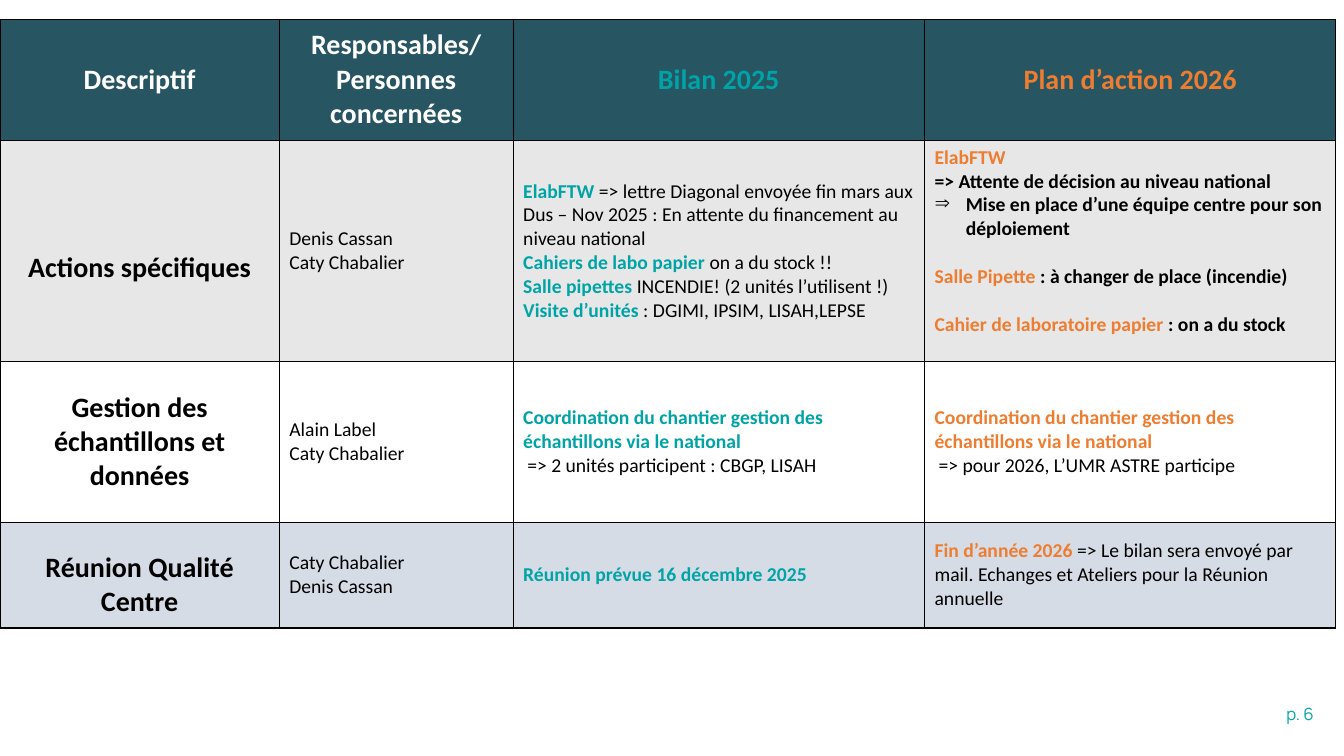
from dataclasses import dataclass

from lxml import etree
from pptx import Presentation
from pptx.dml.color import RGBColor
from pptx.enum.text import MSO_ANCHOR, PP_ALIGN
from pptx.oxml.ns import qn
from pptx.util import Inches, Pt

CENTER, LEFT, RIGHT = PP_ALIGN.CENTER, PP_ALIGN.LEFT, PP_ALIGN.RIGHT
MIDDLE = MSO_ANCHOR.MIDDLE


@dataclass(frozen=True)
class Theme:
    font: str = "Calibri"
    page_font: str = "Manrope"
    heading_size: int = 20
    body_size: int = 14
    page_size: int = 12
    blank_line: int = 17
    border_width: int = 1
    black: str = "000000"
    white: str = "FFFFFF"
    teal: str = "00A3A6"
    orange: str = "ED7D31"
    header_fill: str = "275662"
    grey_fill: str = "E7E7E7"
    blue_fill: str = "D6DCE5"


THEME = Theme()


def line(*spans, **layout):
    return spans, layout


def text(content, color=THEME.black, bold=False, size=THEME.body_size, font=THEME.font):
    return content, color, bold, size, font


def teal(content):
    return text(content, THEME.teal, bold=True)


def orange(content):
    return text(content, THEME.orange, bold=True)


def strong(content):
    return text(content, bold=True)


def heading(content, color=THEME.black):
    return line(text(content, color, bold=True, size=THEME.heading_size), align=CENTER)


def people(*names):
    return [line(text(name)) for name in names]


class SlideBuilder:
    def __init__(self, deck, theme):
        self.theme = theme
        self.page = deck.slides.add_slide(deck.slide_layouts[6])

    def fill_text(self, frame, lines):
        for index, (spans, layout) in enumerate(lines):
            para = frame.paragraphs[0] if index == 0 else frame.add_paragraph()
            self.format_paragraph(para, **layout)
            for content, color, bold, size, font in spans:
                span = para.add_run()
                span.text = content
                span.font.name = font
                span.font.size = Pt(size)
                span.font.bold = bold
                span.font.color.rgb = RGBColor.from_string(color)

    def format_paragraph(self, para, align=LEFT, before=0, indent=0, bullet=None):
        para.alignment = align
        para.space_before = Pt(before)
        properties = para._p.get_or_add_pPr()
        if indent:
            properties.set("marL", str(Inches(indent)))
        if bullet:
            properties.set("indent", str(-Inches(indent)))
            etree.SubElement(properties, qn("a:buChar"), char=bullet)

    def add_label(self, left, top, width, height, lines):
        box = self.page.shapes.add_textbox(
            Inches(left), Inches(top), Inches(width), Inches(height))
        box.text_frame.word_wrap = True
        self.fill_text(box.text_frame, lines)

    def add_border(self, cell):
        properties = cell._tc.get_or_add_tcPr()
        for position, side in enumerate(("a:lnL", "a:lnR", "a:lnT", "a:lnB")):
            edge = etree.Element(qn(side), w=str(Pt(self.theme.border_width)))
            fill = etree.SubElement(edge, qn("a:solidFill"))
            etree.SubElement(fill, qn("a:srgbClr"), val=self.theme.black)
            properties.insert(position, edge)

    def add_table(self, left, top, widths, heights, fills, rows, padding):
        table = self.page.shapes.add_table(
            len(heights), len(widths), Inches(left), Inches(top),
            Inches(sum(widths)), Inches(sum(heights))).table
        table.first_row = table.horz_banding = False
        for column, width in zip(table.columns, widths):
            column.width = Inches(width)
        for row, height in zip(table.rows, heights):
            row.height = Inches(height)
        for row_index, (fill, contents) in enumerate(zip(fills, rows)):
            for column_index, lines in enumerate(contents):
                cell = table.cell(row_index, column_index)
                extra_top, extra_bottom = padding.get((row_index, column_index), (0, 0))
                cell.margin_left = cell.margin_right = Inches(0.1)
                cell.margin_top = Inches(0.05 + extra_top)
                cell.margin_bottom = Inches(0.05 + extra_bottom)
                cell.vertical_anchor = MIDDLE
                cell.fill.solid()
                cell.fill.fore_color.rgb = RGBColor.from_string(fill)
                self.add_border(cell)
                self.fill_text(cell.text_frame, lines)


ROWS = [
    [
        [heading("Descriptif", THEME.white)],
        [heading("Responsables/", THEME.white),
         heading("Personnes concernées", THEME.white)],
        [heading("Bilan 2025", THEME.teal)],
        [heading("Plan d’action 2026", THEME.orange)],
    ],
    [
        [heading("Actions spécifiques")],
        people("Denis Cassan", "Caty Chabalier"),
        [line(teal("ElabFTW "),
              text("=> lettre Diagonal envoyée fin mars aux Dus – Nov 2025 : "
                   "En attente du financement au niveau national")),
         line(teal("Cahiers de labo papier "), text("on a du stock !!")),
         line(teal("Salle pipettes "), text("INCENDIE! (2 unités l’utilisent !)")),
         line(teal("Visite d’unités"), text(" : DGIMI, IPSIM, LISAH,LEPSE"))],
        [line(orange("ElabFTW")),
         line(strong("=> Attente de décision au niveau national")),
         line(strong("Mise en place d’une équipe centre pour son déploiement"),
              indent=0.31, bullet="⇒"),
         line(orange("Salle Pipette "), strong(": à changer de place (incendie)"),
              before=THEME.blank_line),
         line(orange("Cahier de laboratoire papier "), strong(": on a du stock"),
              before=THEME.blank_line)],
    ],
    [
        [heading("Gestion des échantillons et données")],
        people("Alain Label", "Caty Chabalier"),
        [line(teal("Coordination du chantier gestion des échantillons via le national")),
         line(text("=> 2 unités participent : CBGP, LISAH"), indent=0.04)],
        [line(orange("Coordination du chantier gestion des échantillons via le national")),
         line(text("=> pour 2026, L’UMR ASTRE participe"), indent=0.04)],
    ],
    [
        [heading("Réunion Qualité Centre")],
        people("Caty Chabalier", "Denis Cassan"),
        [line(teal("Réunion prévue 16 décembre 2025"))],
        [line(orange("Fin d’année 2026 "),
              text("=> Le bilan sera envoyé par mail. Echanges et Ateliers "
                   "pour la Réunion annuelle"))],
    ],
]


def main():
    deck = Presentation()
    deck.slide_width, deck.slide_height = Inches(13.33), Inches(7.5)
    builder = SlideBuilder(deck, THEME)
    builder.add_label(10.85, 6.93, 2.28, 0.32, [
        line(text("p. 6", THEME.teal, size=THEME.page_size, font=THEME.page_font),
             align=RIGHT)])
    builder.add_table(
        left=0, top=0.19,
        widths=[2.77, 2.32, 4.08, 4.08],
        heights=[1.2, 2.2, 1.59, 1.05],
        fills=[THEME.header_fill, THEME.grey_fill, THEME.white, THEME.blue_fill],
        rows=ROWS,
        padding={(1, 0): (0.34, 0), (1, 3): (0, 0.2), (3, 0): (0.2, 0)})
    deck.save("out.pptx")


if __name__ == "__main__":
    main()
